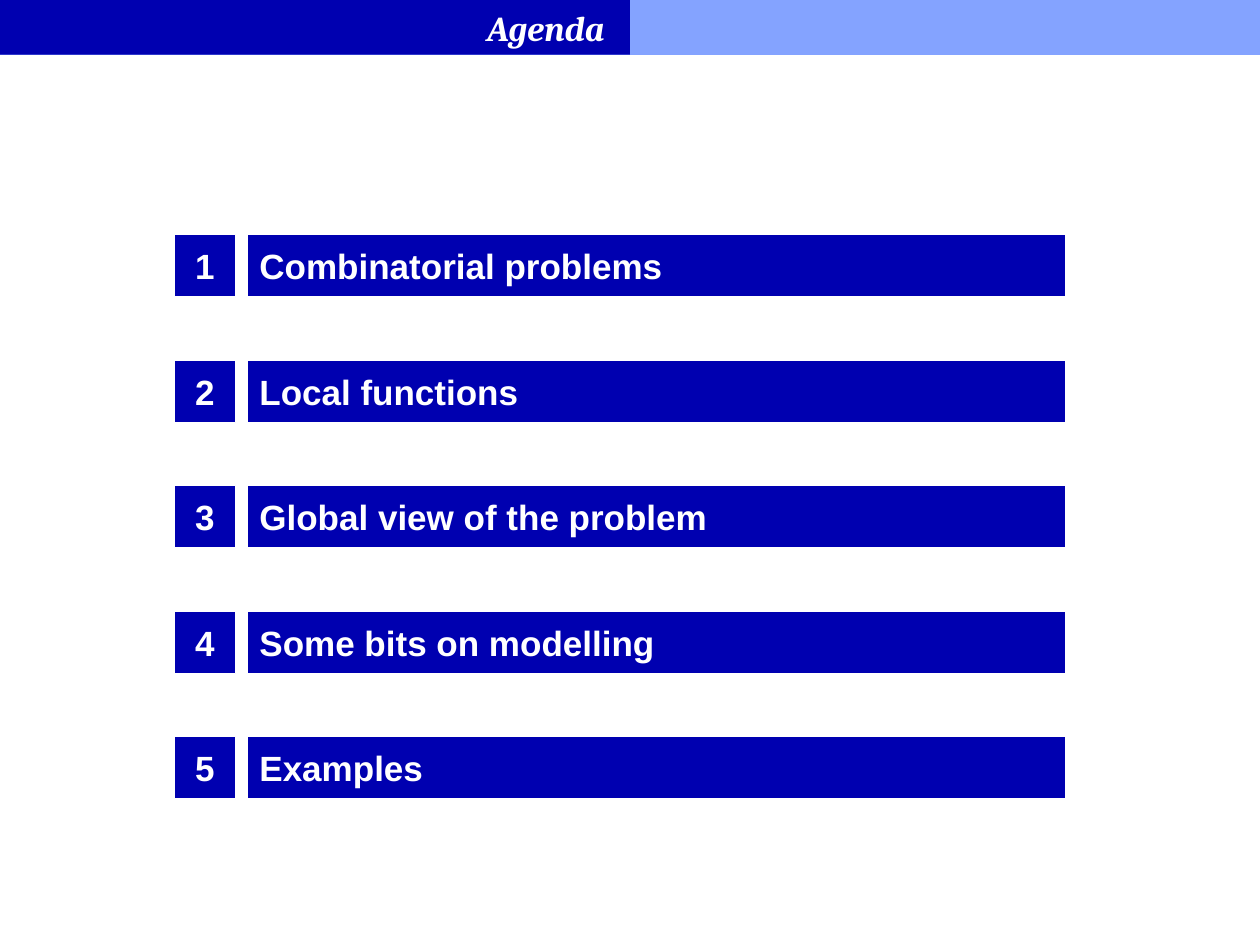
from lxml.etree import SubElement
from pptx import Presentation
from pptx.dml.color import RGBColor
from pptx.enum.shapes import MSO_SHAPE
from pptx.enum.text import MSO_ANCHOR, MSO_AUTO_SIZE, PP_ALIGN
from pptx.oxml.ns import qn
from pptx.util import Cm, Pt

NAVY = RGBColor(0x00, 0x00, 0xB0)
BLUE = RGBColor(0x33, 0x66, 0xFF)
WHITE = RGBColor(0xFF, 0xFF, 0xFF)

PAGE_WIDTH, PAGE_HEIGHT = 25.4, 19.05
TOPICS = [
    "Combinatorial problems",
    "Local functions",
    "Global view of the problem",
    "Some bits on modelling",
    "Examples",
]
FIRST_TOP, ROW_STEP, ROW_HEIGHT = 4.73, 2.53, 1.26
NUMBER_LEFT, NUMBER_WIDTH = 3.51, 1.24
TOPIC_LEFT, TOPIC_WIDTH = 4.98, 16.51


def add_box(page, left, top, width, height, color):
    box = page.shapes.add_shape(
        MSO_SHAPE.RECTANGLE, Cm(left), Cm(top), Cm(width), Cm(height))
    box.shadow.inherit = False
    box.fill.solid()
    box.fill.fore_color.rgb = color
    box.line.fill.background()
    return box


def write_text(box, text, font_name, alignment):
    box.text_frame.text = text
    paragraph = box.text_frame.paragraphs[0]
    paragraph.alignment = alignment
    font = paragraph.runs[0].font
    font.name, font.size, font.bold = font_name, Pt(20), True
    font.color.rgb = WHITE
    return font


def add_header_band(page):
    """Add the translucent band and send it behind the title."""
    band = add_box(page, 0, 0, PAGE_WIDTH, 1.11, BLUE)
    color = band.fill._xPr.find(qn("a:solidFill"))[0]
    SubElement(color, qn("a:alpha"), val="60000")
    page.shapes._spTree.insert(2, band._element)


def format_title(title, text):
    title.left, title.top = Cm(0), Cm(0)
    title.width, title.height = Cm(PAGE_WIDTH / 2), Cm(1.1)
    title.fill.solid()
    title.fill.fore_color.rgb = NAVY
    frame = title.text_frame
    frame.auto_size = MSO_AUTO_SIZE.NONE
    frame.vertical_anchor = MSO_ANCHOR.TOP
    frame.margin_left, frame.margin_right = Cm(1.27), Cm(0.51)
    write_text(title, text, "Cambria", PP_ALIGN.RIGHT).italic = True


def add_label(page, left, top, width, text, alignment):
    box = add_box(page, left, top, width, ROW_HEIGHT, NAVY)
    box.line.color.rgb = WHITE
    box.line.width = Pt(0.75)
    box.text_frame.vertical_anchor = MSO_ANCHOR.MIDDLE
    write_text(box, text, "Arial", alignment)


def add_agenda(page, topics):
    for index, topic in enumerate(topics):
        top = FIRST_TOP + index * ROW_STEP
        add_label(page, NUMBER_LEFT, top, NUMBER_WIDTH, str(index + 1), PP_ALIGN.CENTER)
        add_label(page, TOPIC_LEFT, top, TOPIC_WIDTH, topic, PP_ALIGN.LEFT)


def main():
    deck = Presentation()
    deck.slide_width, deck.slide_height = Cm(PAGE_WIDTH), Cm(PAGE_HEIGHT)
    page = deck.slides.add_slide(deck.slide_layouts.get_by_name("Title Only"))
    add_header_band(page)
    format_title(page.shapes.title, "Agenda")
    add_agenda(page, TOPICS)
    deck.save("out.pptx")


if __name__ == "__main__":
    main()
